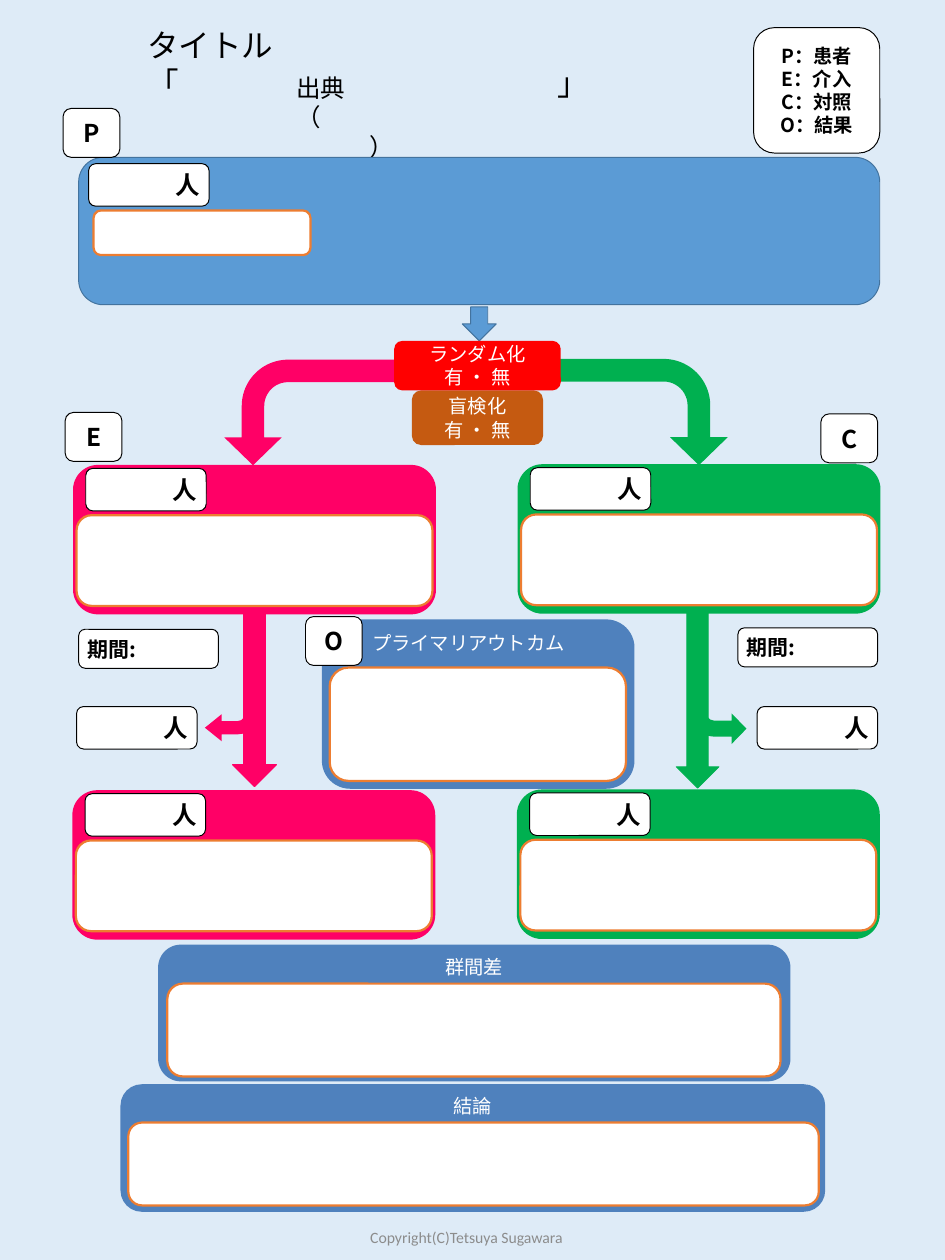
from dataclasses import dataclass
from typing import Optional

from lxml.etree import SubElement
from pptx import Presentation
from pptx.dml.color import RGBColor
from pptx.enum.shapes import MSO_SHAPE as Kind
from pptx.enum.text import MSO_ANCHOR as Anchor, PP_ALIGN as Align
from pptx.oxml.ns import qn
from pptx.util import Inches, Pt

NOTO = "Noto Sans CJK JP"
PINK, GREEN, BLUE, SKY = "FF0066", "00B050", "4F81BD", "5B9BD5"
WHITE, BLACK, ORANGE, NAVY = "FFFFFF", "000000", "ED7D31", "43739E"


@dataclass
class Words:
    lines: list[str]
    size: float
    color: str = BLACK
    bold: bool = False
    align: Align = Align.CENTER
    anchor: Anchor = Anchor.MIDDLE
    font: str = NOTO
    tab: float = 0


@dataclass
class Box:
    left: float
    top: float
    width: float
    height: float
    fill: str = WHITE
    line: Optional[str] = None
    weight: float = 1
    words: Optional[Words] = None
    kind: Kind = Kind.ROUNDED_RECTANGLE
    turn: float = 0
    flip: bool = False
    bends: tuple[float, ...] = ()

    def frame(self) -> list[int]:
        return [Inches(n) for n in (self.left, self.top, self.width, self.height)]


def paint(code: str) -> RGBColor:
    return RGBColor.from_string(code)


def write(frame, words: Words) -> None:
    frame.word_wrap = True
    frame.vertical_anchor = words.anchor
    style = {"size": Pt(words.size), "bold": words.bold, "name": words.font}
    for i, line in enumerate(words.lines):
        para = frame.paragraphs[0] if i == 0 else frame.add_paragraph()
        para.alignment = words.align
        if "\t" in line:
            tabs = SubElement(para._p.get_or_add_pPr(), qn("a:tabLst"))
            SubElement(tabs, qn("a:tab"), pos=str(Inches(words.tab)), algn="l")
        run = para.add_run()
        run.text = line
        for key, value in style.items():
            setattr(run.font, key, value)
        run.font.color.rgb = paint(words.color)
        SubElement(run._r.get_or_add_rPr(), qn("a:ea"), typeface=words.font)


def draw(slide, box: Box) -> None:
    shape = slide.shapes.add_shape(box.kind, *box.frame())
    shape.shadow.inherit = False
    shape.fill.solid()
    shape.fill.fore_color.rgb = paint(box.fill)
    if box.line:
        shape.line.color.rgb = paint(box.line)
        shape.line.width = Pt(box.weight)
    else:
        shape.line.fill.background()
    for i, bend in enumerate(box.bends):
        shape.adjustments[i] = bend
    shape.rotation = box.turn
    if box.flip:
        shape._element.spPr.xfrm.set("flipV", "1")
    if box.words:
        write(shape.text_frame, box.words)


def label(slide, box: Box) -> None:
    write(slide.shapes.add_textbox(*box.frame()).text_frame, box.words)


def blank(left: float, top: float, width: float, height: float) -> Box:
    return Box(left, top, width, height, line=ORANGE, weight=2.25)


def count(left: float, top: float) -> Box:
    words = Words(["人"], 24.9, bold=True, align=Align.RIGHT)
    return Box(left, top, 1.7, 0.6, line=BLACK, words=words)


def badge(left: float, top: float, mark: str) -> Box:
    return Box(left, top, 0.8, 0.69, line=BLACK, words=Words([mark], 24.9, bold=True))


def period(left: float, top: float) -> Box:
    words = Words(["期間:"], 21.3, bold=True, align=Align.LEFT)
    return Box(left, top, 1.97, 0.55, line=BLACK, words=words)


def group(left: float, top: float, fill: str) -> list[Box]:
    return [
        Box(left, top, 5.12, 2.11, fill),
        blank(left + 0.05, top + 0.71, 5.02, 1.28),
        count(left + 0.18, top + 0.05),
    ]


def panel(left: float, top: float, width: float, height: float, head: str) -> Box:
    words = Words([head], 19.6, WHITE, anchor=Anchor.TOP)
    return Box(left, top, width, height, BLUE, words=words)


def choice(left: float, top: float, width: float, height: float,
           fill: str, head: str) -> Box:
    return Box(left, top, width, height, fill,
               words=Words([head, "有 ・ 無"], 19.6, WHITE))


def main() -> None:
    deck = Presentation()
    deck.slide_width, deck.slide_height = Inches(13.33), Inches(17.78)
    slide = deck.slides.add_slide(deck.slide_layouts[6])
    slide.background.fill.solid()
    slide.background.fill.fore_color.rgb = paint("DEEBF7")

    # Title, source and credit
    left = {"align": Align.LEFT, "anchor": Anchor.TOP}
    title = Words(["タイトル", "「\t」"], 32, tab=5.78, **left)
    source = Words(["出典", "（", "\t）"], 24.9, tab=1.04, **left)
    credit = Words(["Copyright(C)Tetsuya Sugawara"], 16, "8C8C8C", font="Calibri")
    label(slide, Box(1.98, 0.32, 8.57, 0.64, words=title))
    label(slide, Box(4.08, 0.98, 6.8, 0.64, words=source))
    label(slide, Box(4.33, 17.1, 4.5, 0.73, words=credit))

    # Legend and patients
    legend = Words(["P：患者", "E：介入", "C：対照", "O：結果"], 19.6, bold=True)
    top = [
        Box(10.63, 0.39, 1.78, 1.77, line=BLACK, words=legend),
        Box(1.11, 2.22, 11.3, 2.08, SKY, NAVY),
        badge(0.89, 1.53, "P"),
        count(1.25, 2.31),
        blank(1.32, 2.97, 3.06, 0.63),
    ]

    # Flow arrows
    bent, down = Kind.BENT_ARROW, Kind.DOWN_ARROW
    wide = (0.213, 0.271, 0.263, 0.438)
    flow = [
        Box(6.52, 4.33, 0.48, 0.48, SKY, NAVY, kind=down),
        Box(3.66, 4.58, 1.49, 2.48, PINK, kind=bent, turn=90, flip=True, bends=wide),
        Box(8.25, 4.55, 1.5, 2.53, GREEN, kind=bent, turn=90, bends=wide),
        Box(3.28, 8.54, 0.62, 2.56, PINK, PINK, kind=down),
        Box(9.54, 8.62, 0.6, 2.5, GREEN, GREEN, kind=down),
        Box(9.73, 9.43, 0.8, 1.07, GREEN, kind=bent, flip=True,
            bends=(0.28, 0.271, 0.263, 0.438)),
        Box(2.89, 9.66, 0.75, 0.8, PINK, kind=bent, turn=180,
            bends=(0.25, 0.255, 0.316, 0.384)),
    ]

    # Allocation and the two arms
    arms = [
        choice(5.81, 5.51, 1.85, 0.77, "C55A11", "盲検化"),
        choice(5.56, 4.81, 2.35, 0.7, "FF0000", "ランダム化"),
        *group(1.03, 6.56, PINK), *group(7.3, 6.55, GREEN),
        *group(1.02, 11.15, PINK), *group(7.29, 11.14, GREEN),
        badge(0.92, 5.82, "E"), badge(11.58, 5.84, "C"),
        period(1.11, 8.88), period(10.41, 8.86),
        count(1.08, 9.97), count(10.68, 9.97),
    ]

    # Outcome, difference and conclusion
    ends = [
        panel(4.54, 8.74, 4.41, 2.39, "プライマリアウトカム　"),
        blank(4.65, 9.42, 4.18, 1.6),
        badge(4.31, 8.7, "O"),
        panel(2.23, 13.33, 8.92, 1.93, "群間差"),
        blank(2.36, 13.88, 8.65, 1.31),
        panel(1.7, 15.3, 9.94, 1.8, "結論"),
        blank(1.81, 15.84, 9.74, 1.17),
    ]
    for box in top + flow + arms + ends:
        draw(slide, box)
    deck.save("out.pptx")


if __name__ == "__main__":
    main()
